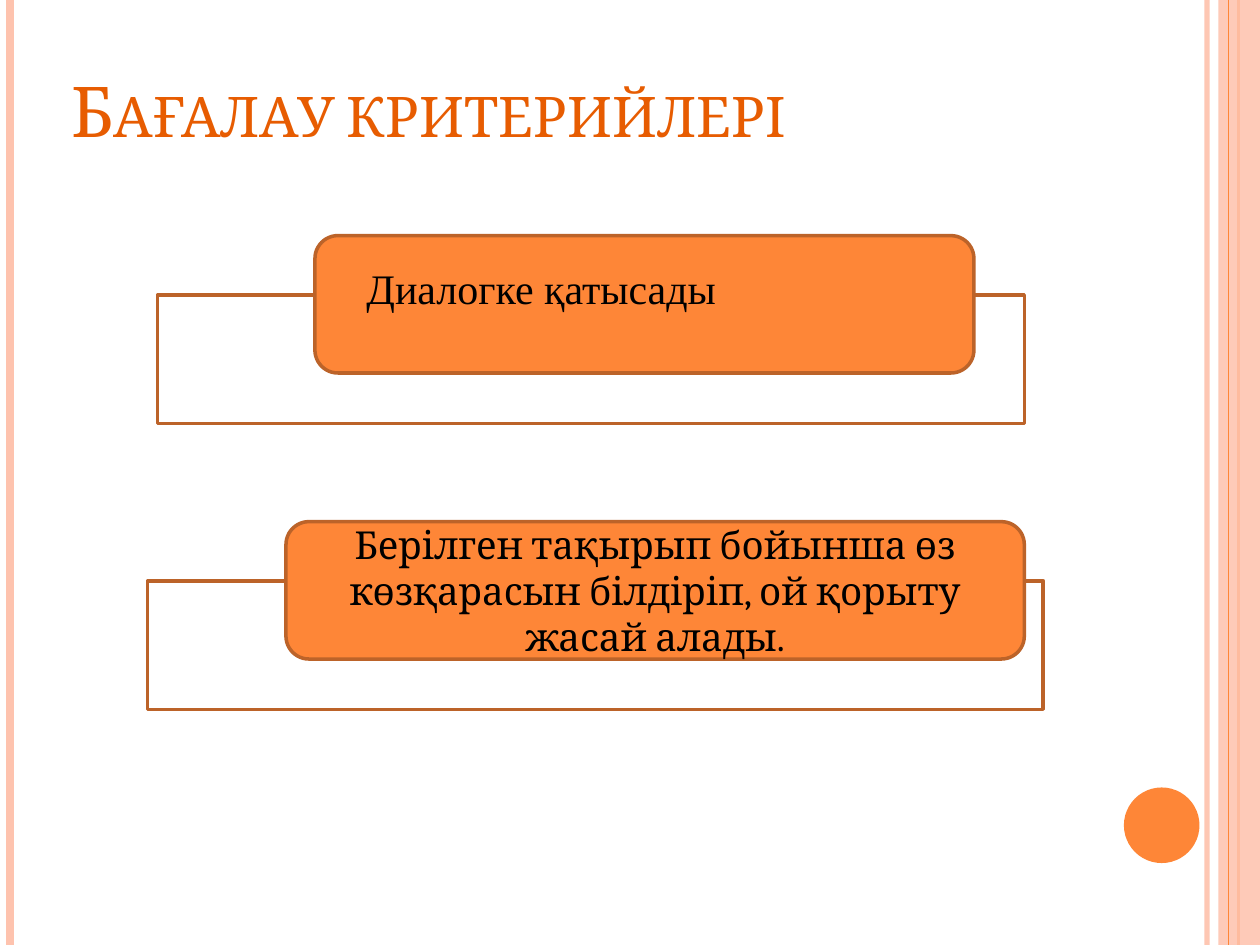
from dataclasses import dataclass

from lxml import etree
from pptx import Presentation
from pptx.dml.color import RGBColor
from pptx.enum.shapes import MSO_CONNECTOR as Link, MSO_SHAPE as Kind
from pptx.enum.text import MSO_ANCHOR as Anchor, PP_ALIGN as Align
from pptx.oxml.ns import qn
from pptx.util import Inches, Pt

WHITE = RGBColor(0xFF, 0xFF, 0xFF)
BLACK = RGBColor(0x00, 0x00, 0x00)
ORANGE = RGBColor(0xFE, 0x86, 0x37)
PEACH = RGBColor(0xFE, 0xC3, 0xAE)
BROWN = RGBColor(0xBC, 0x63, 0x29)
RUST = RGBColor(0xE7, 0x5C, 0x01)


@dataclass
class Box:
    left: float
    top: float
    width: float
    height: float

    def place(self):
        return [Inches(n) for n in (self.left, self.top, self.width, self.height)]


@dataclass
class Stripe:
    x: float
    width: float
    color: RGBColor
    alpha: int = 100


@dataclass
class Card:
    panel: Box
    label: Box
    text: str = ""


def fade(item, alpha: int) -> None:
    """Set the opacity, in percent, of the only solid fill in a shape."""
    color = next(item._element.spPr.iter(qn("a:srgbClr")))
    etree.SubElement(color, qn("a:alpha")).set("val", str(alpha * 1000))


def add_stripe(slide, stripe: Stripe) -> None:
    x = Inches(stripe.x)
    line = slide.shapes.add_connector(Link.STRAIGHT, x, 0, x, Inches(7.5))
    line.line.color.rgb = stripe.color
    line.line.width = Pt(stripe.width)
    if stripe.alpha < 100:
        fade(line, stripe.alpha)
    etree.SubElement(line._element.spPr, qn("a:effectLst"))


def add_block(slide, kind: Kind, box: Box, fill: RGBColor, edge: RGBColor | None = None):
    block = slide.shapes.add_shape(kind, *box.place())
    block.shadow.inherit = False
    block.fill.solid()
    block.fill.fore_color.rgb = fill
    if edge is None:
        block.line.fill.background()
    else:
        block.line.color.rgb = edge
        block.line.width = Pt(2)
    return block


def write(shape, text: str, size: int, face: str, color: RGBColor,
          anchor: Anchor, align: Align = Align.LEFT):
    frame = shape.text_frame
    frame.word_wrap = True
    frame.vertical_anchor = anchor
    para = frame.paragraphs[0]
    run = para.add_run()
    run.text = text
    para.alignment = align
    para.font.size = Pt(size)
    para.font.name = face
    para.font.color.rgb = color
    return run


def add_card(slide, card: Card) -> None:
    add_block(slide, Kind.RECTANGLE, card.panel, WHITE, BROWN)
    label = add_block(slide, Kind.ROUNDED_RECTANGLE, card.label, ORANGE, BROWN)
    if card.text:
        write(label, card.text, 22, "Cambria", BLACK, Anchor.MIDDLE, Align.CENTER)


def main() -> None:
    deck = Presentation()
    deck.slide_width, deck.slide_height = Inches(10), Inches(7.5)
    slide = deck.slides.add_slide(deck.slide_layouts[6])

    # Side stripes and dot
    for stripe in (Stripe(9.58, 3, PEACH, 93), Stripe(0.08, 4.5, PEACH),
                   Stripe(9.83, 1.5, ORANGE)):
        add_stripe(slide, stripe)
    band = add_block(slide, Kind.RECTANGLE, Box(9.67, 0, 0.33, 7.5), PEACH)
    fade(band, 87)
    add_stripe(slide, Stripe(9.75, 0.75, ORANGE))
    add_block(slide, Kind.OVAL, Box(8.92, 6.25, 0.6, 0.6), ORANGE)

    # Title in small capitals
    title = slide.shapes.add_textbox(*Box(0.47, 0, 8.17, 1.25).place())
    run = write(title, "Бағалау критерийлері", 40, "Cambria", RUST, Anchor.BOTTOM)
    run._r.get_or_add_rPr().set("cap", "small")

    # Criteria
    add_card(slide, Card(
        Box(1.17, 4.61, 7.11, 1.02), Box(2.27, 4.14, 5.86, 1.09),
        "Берілген тақырып бойынша өз көзқарасын білдіріп, ой қорыту жасай алады."))
    add_card(slide, Card(Box(1.25, 2.34, 6.88, 1.02), Box(2.5, 1.87, 5.23, 1.09)))
    note = slide.shapes.add_textbox(*Box(2.81, 2.03, 3.44, 0.5).place())
    write(note, "Диалогке қатысады", 24, "Times New Roman", BLACK, Anchor.MIDDLE)

    deck.save("out.pptx")


if __name__ == "__main__":
    main()
